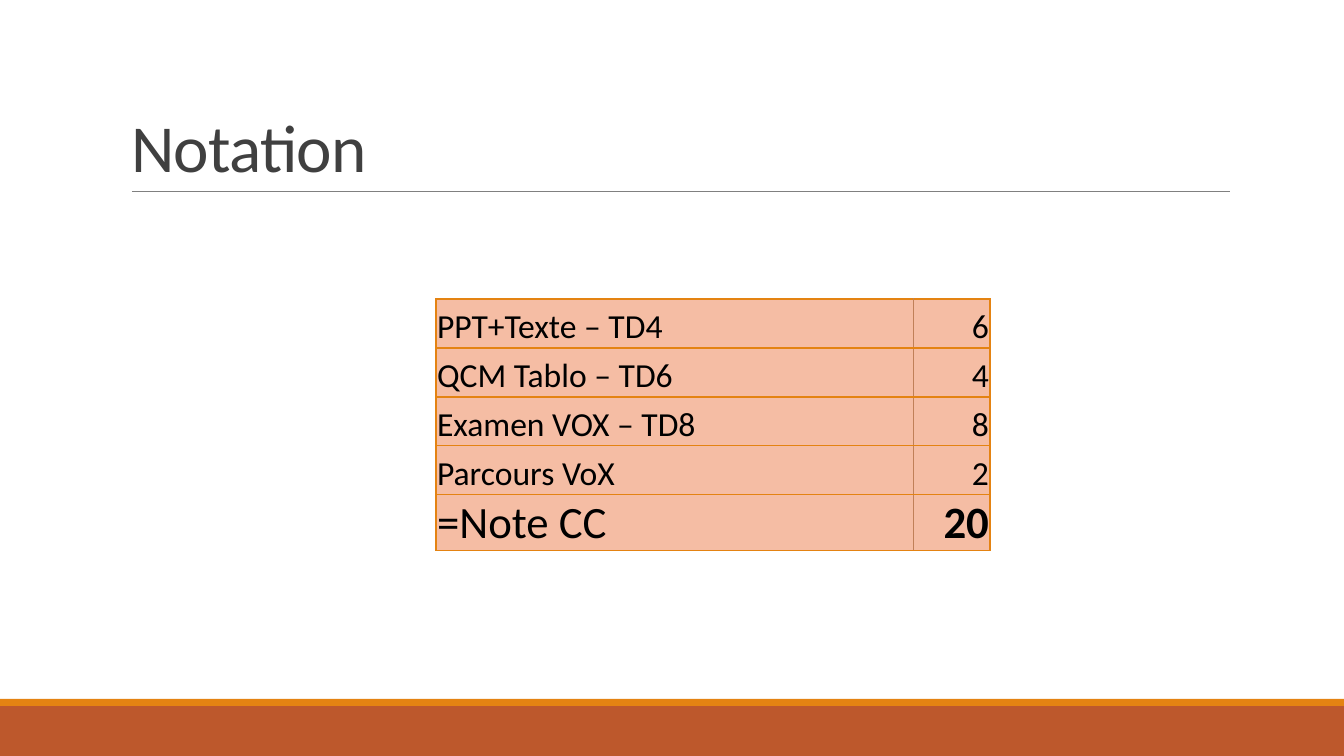
from lxml.etree import SubElement
from pptx import Presentation
from pptx.dml.color import RGBColor
from pptx.enum.shapes import MSO_CONNECTOR as Connector, MSO_SHAPE as Shape
from pptx.enum.text import MSO_ANCHOR as Anchor, PP_ALIGN as Align
from pptx.oxml.ns import qn
from pptx.util import Pt

TITLE = "Notation"
GRADES = [
    ("PPT+Texte – TD4", "6"),
    ("QCM Tablo – TD6", "4"),
    ("Examen VOX – TD8", "8"),
    ("Parcours VoX", "2"),
    ("=Note CC", "20"),
]
BANDS = [(706, 50, "BD582C"), (699, 7, "E48312")]
COLUMNS = [477, 77]
ROWS = [49, 49, 49, 49, 55]
TABLE_LEFT, TABLE_TOP = 436, 299
WIDTH, HEIGHT = 1344, 756
FONT = "Calibri"


def px(length):
    return round(length * 914400 / 100.8)


def color(value):
    return RGBColor.from_string(value)


def add_run(paragraph, text, size, value, bold=False):
    run = paragraph.add_run()
    run.text = text
    run.font.name = FONT
    run.font.size = Pt(size)
    run.font.bold = bold
    run.font.color.rgb = color(value)
    return run


def set_border(cell, side, value, width):
    properties = cell._tc.get_or_add_tcPr()
    line = SubElement(properties, qn(f"a:ln{side}"), w=str(Pt(width)))
    fill = SubElement(line, qn("a:solidFill"))
    SubElement(fill, qn("a:srgbClr"), val=value)


def add_background(slide):
    for top, height, value in BANDS:
        band = slide.shapes.add_shape(Shape.RECTANGLE, 0, px(top), px(WIDTH), px(height))
        band.shadow.inherit = False
        band.fill.solid()
        band.fill.fore_color.rgb = color(value)
        band.line.fill.background()
    rule = slide.shapes.add_connector(Connector.STRAIGHT, px(132), px(191), px(1230), px(191))
    rule.line.color.rgb = color("808080")
    rule.line.width = Pt(0.5)
    SubElement(rule._element.spPr, qn("a:effectLst"))


def add_title(slide):
    title = slide.shapes.title
    title.left, title.top, title.width, title.height = px(121), px(31), px(1109), px(160)
    title.text_frame.vertical_anchor = Anchor.BOTTOM
    title.text_frame.word_wrap = True
    paragraph = title.text_frame.paragraphs[0]
    paragraph.alignment = Align.LEFT
    paragraph.line_spacing = 0.85
    run = add_run(paragraph, TITLE, 48, "404040")
    run.font._element.set("spc", "-50")


def add_grades(slide):
    frame = slide.shapes.add_table(
        len(ROWS), len(COLUMNS), px(TABLE_LEFT), px(TABLE_TOP), px(sum(COLUMNS)), px(sum(ROWS))
    )
    table = frame.table
    table.first_row = table.horz_banding = False
    for column, width in zip(table.columns, COLUMNS):
        column.width = px(width)
    for row, height in zip(table.rows, ROWS):
        row.height = px(height)
    for row_index, grade in enumerate(GRADES):
        total = row_index == len(GRADES) - 1
        for column_index, text in enumerate(grade):
            score = column_index == 1
            cell = table.cell(row_index, column_index)
            inner = "L" if score else "R"
            for side in "LRTB":
                border = ("C08058", 0.5) if side == inner else ("E48312", 1)
                set_border(cell, side, *border)
            cell.fill.solid()
            cell.fill.fore_color.rgb = color("F5BDA4")
            cell.vertical_anchor = Anchor.BOTTOM
            cell.margin_left = cell.margin_right = cell.margin_top = px(1)
            cell.margin_bottom = 0
            paragraph = cell.text_frame.paragraphs[0]
            paragraph.alignment = Align.RIGHT if score else Align.LEFT
            add_run(paragraph, text, 32 if total else 24, "000000", total and score)


def main():
    presentation = Presentation()
    presentation.slide_width, presentation.slide_height = px(WIDTH), px(HEIGHT)
    slide = presentation.slides.add_slide(presentation.slide_layouts[5])
    add_background(slide)
    add_title(slide)
    add_grades(slide)
    presentation.save("out.pptx")


if __name__ == "__main__":
    main()
